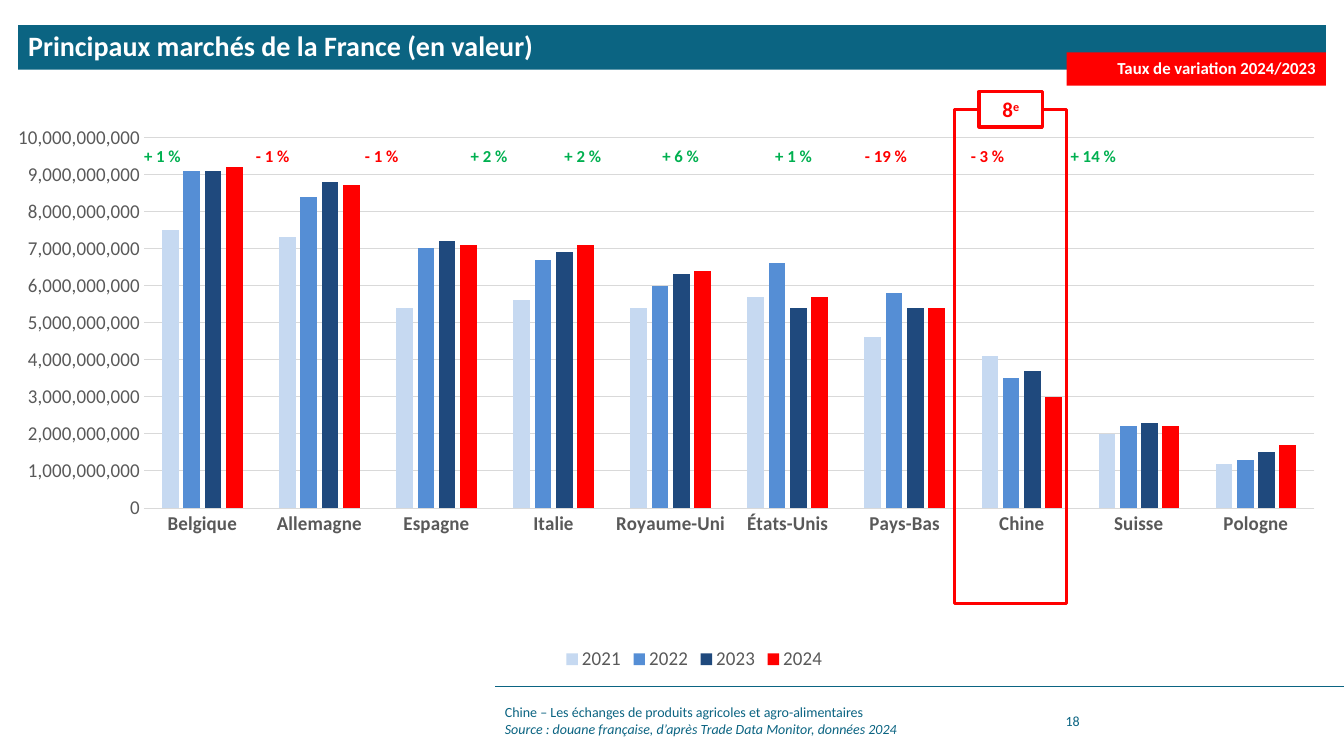
"""Build the slide on France's main export markets by value."""
from lxml import etree
from pptx import Presentation
from pptx.chart.data import CategoryChartData
from pptx.dml.color import RGBColor
from pptx.enum.chart import XL_CHART_TYPE as CT, XL_LEGEND_POSITION as LP, XL_TICK_MARK as TM
from pptx.enum.shapes import MSO_CONNECTOR, MSO_SHAPE
from pptx.enum.text import MSO_ANCHOR, MSO_AUTO_SIZE, PP_ALIGN
from pptx.oxml import parse_xml
from pptx.oxml.ns import nsdecls, qn
from pptx.util import Inches, Pt

COLORS = {
    "teal": "0B6482", "white": "FFFFFF", "red": "FF0000", "green": "00B050",
    "grey": "595959", "grid": "D9D9D9",
    "2021": "C6D9F1", "2022": "558ED5", "2023": "1F497D", "2024": "FF0000",
}
FONT = "Calibri"
RATES = ["+ 1 %", "- 1 %", "- 1 %", "+ 2 %", "+ 2 %",
         "+ 6 %", "+ 1 %", "- 19 %", "- 3 %", "+ 14 %"]
RATE_TABS = [1.11, 2.19, 3.24, 4.17, 5.14, 6.26, 7.15, 8.2, 9.19]
MARKETS = ["Belgique", "Allemagne", "Espagne", "Italie", "Royaume-Uni",
           "États-Unis", "Pays-Bas", "Chine", "Suisse", "Pologne"]
BILLIONS = {
    "2021": [7.5, 7.3, 5.4, 5.6, 5.4, 5.7, 4.6, 4.1, 2.0, 1.2],
    "2022": [9.1, 8.4, 7.0, 6.7, 6.0, 6.6, 5.8, 3.5, 2.2, 1.3],
    "2023": [9.1, 8.8, 7.2, 6.9, 6.3, 5.4, 5.4, 3.7, 2.3, 1.5],
    "2024": [9.2, 8.7, 7.1, 7.1, 6.4, 5.7, 5.4, 3.0, 2.2, 1.7],
}


def style(font, size, color, bold=False, italic=False):
    """Set the typeface, size, colour and weight of a font."""
    font.name, font.size, font.bold, font.italic = FONT, Pt(size), bold, italic
    font.color.rgb = RGBColor.from_string(COLORS[color])


def add_run(p, text, *look):
    """Append a styled run to a paragraph."""
    r = p.add_run()
    r.text = text
    style(r.font, *look)
    return r


prs = Presentation()
prs.slide_width, prs.slide_height = Inches(13.33), Inches(7.5)
s = prs.slides.add_slide(prs.slide_layouts[5])

rule = s.shapes.add_connector(MSO_CONNECTOR.STRAIGHT, Inches(13.33), Inches(6.81),
                              Inches(4.91), Inches(6.81))
rule.line.color.rgb = RGBColor.from_string(COLORS["teal"])
rule.line.width = Pt(0.5)
etree.SubElement(rule._element.spPr, qn("a:effectLst"))

footer = [("Chine – Les échanges de produits agricoles et agro-alimentaires", False),
          ("Source : douane française, d’après Trade Data Monitor, données 2024", True)]
for left, width, lines in [(4.91, 5.43, footer), (10.47, 0.99, [("18", False)])]:
    tf = s.shapes.add_textbox(Inches(left), Inches(6.95), Inches(width), Inches(0.4)).text_frame
    tf.word_wrap, tf.vertical_anchor = True, MSO_ANCHOR.MIDDLE
    for i, (text, italic) in enumerate(lines):
        p = tf.add_paragraph() if i else tf.paragraphs[0]
        add_run(p, text, 10, "teal", False, italic)

title = s.shapes.title
title.left, title.top, title.width, title.height = map(Inches, (0.18, 0.25, 12.97, 0.44))
badge = s.shapes.add_shape(MSO_SHAPE.RECTANGLE, Inches(10.58), Inches(0.52),
                           Inches(2.57), Inches(0.33))
badge.shadow.inherit = False
badge.line.fill.background()
banners = [(title, "teal", "Principaux marchés de la France (en valeur)", 20, PP_ALIGN.LEFT),
           (badge, "red", "Taux de variation 2024/2023", 12, PP_ALIGN.RIGHT)]
for sp, color, text, size, align in banners:
    sp.fill.solid()
    sp.fill.fore_color.rgb = RGBColor.from_string(COLORS[color])
    tf = sp.text_frame
    tf.word_wrap, tf.auto_size = True, MSO_AUTO_SIZE.NONE
    tf.vertical_anchor = MSO_ANCHOR.MIDDLE
    p = tf.paragraphs[0]
    p.alignment, p.line_spacing = align, 0.9
    add_run(p, text, size, "white", True)

data = CategoryChartData(number_format="#,##0")
data.categories = MARKETS
for year, values in BILLIONS.items():
    data.add_series(year, [round(v * 10**9) for v in values])
chart = s.shapes.add_chart(CT.COLUMN_CLUSTERED, Inches(0.18), Inches(0.96),
                           Inches(12.97), Inches(5.74), data).chart
style(chart.font, 14, "grey")
chart.has_title = False
chart.has_legend = True
chart.legend.position = LP.BOTTOM
chart.legend.include_in_layout = False
style(chart.legend.font, 14, "grey")

plot = chart.plots[0]
plot.gap_width, plot.overlap, plot.vary_by_categories = 219, -27, False
for series in plot.series:
    series.format.fill.solid()
    series.format.fill.fore_color.rgb = RGBColor.from_string(COLORS[series.name])

cat_axis, val_axis = chart.category_axis, chart.value_axis
for axis, bold in [(cat_axis, True), (val_axis, False)]:
    axis.major_tick_mark = axis.minor_tick_mark = TM.NONE
    style(axis.tick_labels.font, 14, "grey", bold)
val_axis.minimum_scale, val_axis.maximum_scale, val_axis.major_unit = 0, 10**10, 10**9
val_axis.tick_labels.number_format = "#,##0"
val_axis.tick_labels.number_format_is_linked = False
val_axis.format.line.fill.background()
for line in (cat_axis.format.line, val_axis.major_gridlines.format.line):
    line.color.rgb = RGBColor.from_string(COLORS["grid"])
    line.width = Pt(0.75)

area = chart._chartSpace.chart.plotArea
for old in area.findall(qn("c:layout")):
    area.remove(old)
area.insert(0, parse_xml(
    f'<c:layout {nsdecls("c")}><c:manualLayout><c:layoutTarget val="inner"/>'
    '<c:xMode val="edge"/><c:yMode val="edge"/><c:x val="0.064"/><c:y val="0.07"/>'
    '<c:w val="0.927"/><c:h val="0.641"/></c:manualLayout></c:layout>'))

tf = s.shapes.add_textbox(Inches(1.33), Inches(1.4), Inches(11.82), Inches(0.3)).text_frame
tf.word_wrap = True
p = tf.paragraphs[0]
tabs = etree.SubElement(p._p.get_or_add_pPr(), qn("a:tabLst"))
for pos in RATE_TABS:
    etree.SubElement(tabs, qn("a:tab"), pos=str(Inches(pos)), algn="l")
for i, rate in enumerate(RATES):
    color = "green" if rate.startswith("+") else "red"
    add_run(p, "\t" + rate if i else rate, 12, color, True)

frame = s.shapes.add_shape(MSO_SHAPE.RECTANGLE, Inches(9.47), Inches(1.09),
                           Inches(1.11), Inches(4.9))
rank = s.shapes.add_shape(MSO_SHAPE.RECTANGLE, Inches(9.71), Inches(0.91),
                          Inches(0.63), Inches(0.35))
for sp in (frame, rank):
    sp.shadow.inherit = False
    sp.line.color.rgb = RGBColor.from_string(COLORS["red"])
    sp.line.width = Pt(2.25)
frame.fill.background()
rank.fill.solid()
rank.fill.fore_color.rgb = RGBColor.from_string(COLORS["white"])
p = rank.text_frame.paragraphs[0]
p.alignment = PP_ALIGN.CENTER
add_run(p, "8", 15, "red", True)
add_run(p, "e", 15, "red", True)._r.get_or_add_rPr().set("baseline", "30000")

prs.save("out.pptx")
